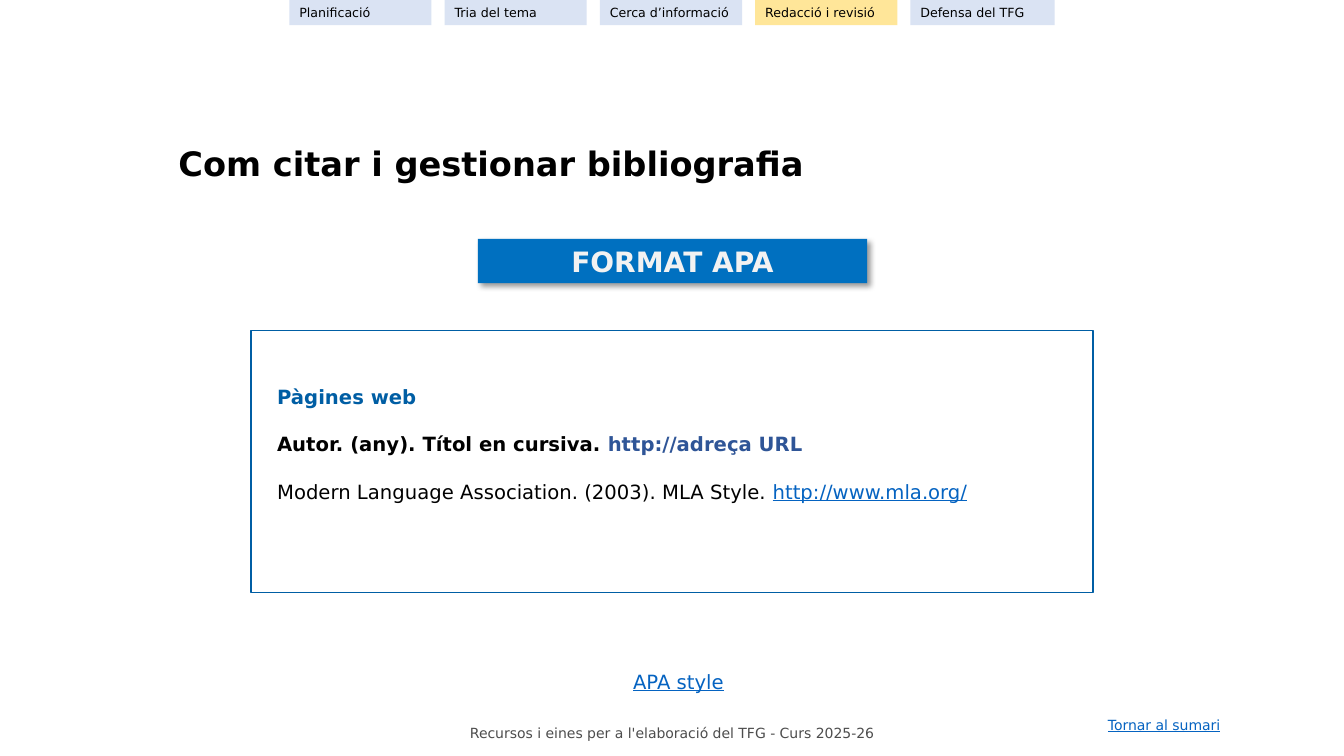
from lxml import etree
from pptx import Presentation
from pptx.dml.color import RGBColor
from pptx.enum import shapes, text
from pptx.oxml import ns
from pptx.util import Inches, Pt

FONT = "DejaVu Sans"
COLORS = {
    "black": "000000",
    "footer": "4D4D4D",
    "link": "0563C1",
    "frame": "005EA4",
    "url": "2F5597",
    "banner": "0070C0",
    "banner_text": "F2F2F2",
    "tab": "DAE3F3",
    "active_tab": "FFE699",
}
TABS = ["Planificació", "Tria del tema", "Cerca d’informació",
        "Redacció i revisió", "Defensa del TFG"]
ACTIVE_TAB = "Redacció i revisió"
REFERENCE = [
    [("Pàgines web", "frame", True, False)],
    [("Autor. (any). Títol en cursiva. ", "black", True, False),
     ("http://adreça URL", "url", True, False)],
    [("Modern Language Association. (2003). MLA Style.\u00a0", "black", False, False),
     ("http://www.mla.org/", "link", False, True)],
]


def rgb(name):
    return RGBColor.from_string(COLORS[name])


def format_run(r, size, color, bold=False, underline=False):
    r.font.name = FONT
    r.font.size = Pt(size)
    r.font.color.rgb = rgb(color)
    r.font.bold = bold
    r.font.underline = underline


def set_text(sp, content, size, color, bold=False, underline=False,
             align=text.PP_ALIGN.LEFT, wrap=True):
    tf = sp.text_frame
    tf.text = content
    tf.word_wrap = wrap
    tf.vertical_anchor = text.MSO_ANCHOR.MIDDLE
    p = tf.paragraphs[0]
    p.alignment = align
    format_run(p.runs[0], size, color, bold, underline)


def add_box(s, box, fill=None, line=None):
    sp = s.shapes.add_shape(shapes.MSO_SHAPE.RECTANGLE, *map(Inches, box))
    sp.shadow.inherit = False
    if fill:
        sp.fill.solid()
        sp.fill.fore_color.rgb = rgb(fill)
    else:
        sp.fill.background()
    if line:
        sp.line.color.rgb = rgb(line)
        sp.line.width = Pt(1)
    else:
        sp.line.fill.background()
    return sp


def add_label(s, box, content, size, color, **style):
    sp = s.shapes.add_textbox(*map(Inches, box))
    set_text(sp, content, size, color, **style)


def add_title(s, box, content):
    sp = s.shapes.title
    sp.left, sp.top, sp.width, sp.height = map(Inches, box)
    set_text(sp, content, 24, "black", bold=True)


def add_shadow(sp):
    effects = sp._element.spPr.find(ns.qn("a:effectLst"))
    shadow = etree.SubElement(effects, ns.qn("a:outerShdw"), blurRad=str(Pt(4)),
                              dist=str(Pt(3)), dir="2700000", algn="tl", rotWithShape="0")
    color = etree.SubElement(shadow, ns.qn("a:srgbClr"), val=COLORS["black"])
    etree.SubElement(color, ns.qn("a:alpha"), val="40000")


def add_banner(s, box, content):
    sp = add_box(s, box, fill="banner")
    add_shadow(sp)
    set_text(sp, content, 20, "banner_text", bold=True, align=text.PP_ALIGN.CENTER)


def add_reference(s, box):
    tf = s.shapes.add_textbox(*map(Inches, box)).text_frame
    tf.word_wrap = True
    for i, parts in enumerate(REFERENCE):
        p = tf.add_paragraph() if i else tf.paragraphs[0]
        if i:
            p.space_before = Pt(17)
        for content, color, bold, underline in parts:
            r = p.add_run()
            r.text = content
            format_run(r, 14, color, bold, underline)


def add_tabs(s):
    for i, name in enumerate(TABS):
        width = 1.43 if i == len(TABS) - 1 else 1.41
        fill = "active_tab" if name == ACTIVE_TAB else "tab"
        sp = add_box(s, (2.87 + 1.54 * i, 0, width, 0.25), fill=fill)
        set_text(sp, name, 9, "black")


def main():
    prs = Presentation()
    prs.slide_width, prs.slide_height = Inches(13.33), Inches(7.5)
    s = prs.slides.add_slide(prs.slide_layouts[5])
    add_label(s, (3.75, 7.14, 5.83, 0.27),
              "Recursos i eines per a l'elaboració del TFG - Curs 2025-26",
              10, "footer", align=text.PP_ALIGN.CENTER)
    add_label(s, (10.89, 7.06, 1.36, 0.27), "Tornar al sumari", 10, "link",
              underline=True, wrap=False)
    add_box(s, (2.49, 3.28, 8.35, 2.6), line="frame")
    add_reference(s, (2.65, 3.77, 8.03, 1.28))
    add_title(s, (1.67, 1.37, 8.35, 0.5), "Com citar i gestionar bibliografia")
    add_banner(s, (4.74, 2.37, 3.86, 0.44), "FORMAT APA")
    add_tabs(s)
    add_label(s, (6.18, 6.59, 1.12, 0.34), "APA style", 14, "link",
              underline=True, wrap=False)
    prs.save("out.pptx")


if __name__ == "__main__":
    main()
